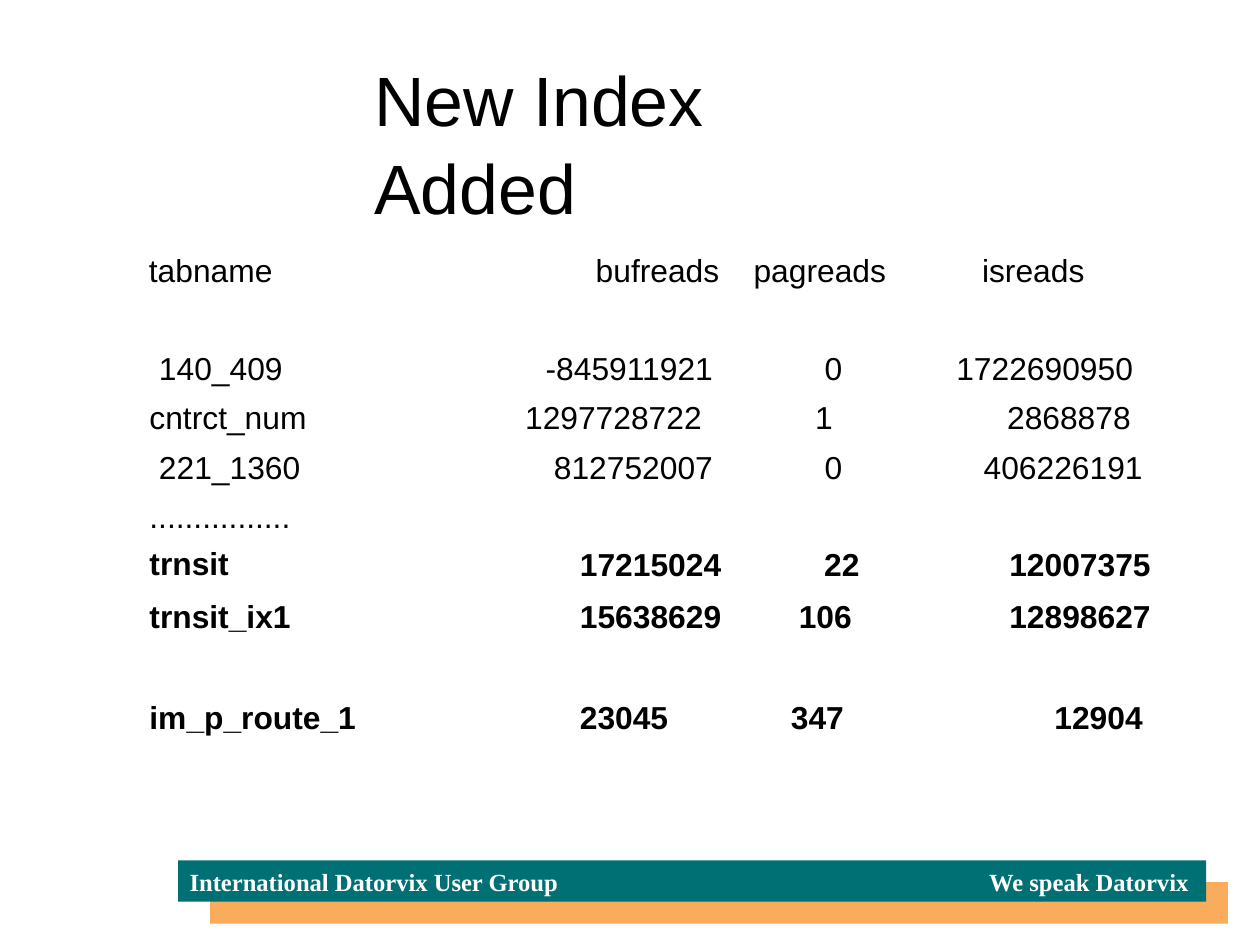
"""Build the slide that lists index read counts after a new index was added."""
from dataclasses import dataclass

from pptx import Presentation
from pptx.dml.color import RGBColor
from pptx.enum.shapes import MSO_SHAPE
from pptx.enum.text import PP_ALIGN
from pptx.slide import Slide
from pptx.table import Table
from pptx.util import Pt


@dataclass(frozen=True)
class Theme:
    body_font: str = "Arial"
    footer_font: str = "Times New Roman"
    ink: RGBColor = RGBColor(0x00, 0x00, 0x00)
    white: RGBColor = RGBColor(0xFF, 0xFF, 0xFF)
    teal: RGBColor = RGBColor(0x00, 0x70, 0x75)
    orange: RGBColor = RGBColor(0xF9, 0xAC, 0x5B)
    title_size: float = 44
    body_size: float = 20
    footer_size: float = 15.5


THEME = Theme()


@dataclass(frozen=True)
class Style:
    font: str = THEME.body_font
    size: float = THEME.body_size
    color: RGBColor = THEME.ink
    bold: bool = False


@dataclass(frozen=True)
class Bar:
    left: float
    top: float
    width: float
    height: float
    color: RGBColor


@dataclass(frozen=True)
class Label:
    text: str
    left: float
    top: float
    width: float
    height: float
    style: Style = Style()
    align: PP_ALIGN = PP_ALIGN.LEFT
    line_spacing: float = 1.0


@dataclass(frozen=True)
class Entry:
    text: str
    left: float = 0
    right: float = 0
    align: PP_ALIGN = PP_ALIGN.LEFT


@dataclass(frozen=True)
class Row:
    height: float
    top: float
    entries: tuple[Entry, ...]
    bold: bool = True
    lead: str = ""


TITLE = Style(size=THEME.title_size)
FOOTER = Style(THEME.footer_font, THEME.footer_size, THEME.white, True)
LEFT, CENTER, RIGHT = PP_ALIGN.LEFT, PP_ALIGN.CENTER, PP_ALIGN.RIGHT
HEADER_TOP, HEADER_HEIGHT = 158, 24
FOOTER_TOP, FOOTER_HEIGHT = 546.5, 19
LEAD_GAP = 7.6

BARS = (
    Bar(132.5, 555.8, 641.5, 26.2, THEME.orange),
    Bar(112.3, 542.2, 648, 25.9, THEME.teal),
)
HEADERS = (("tabname", 93.9, 80), ("bufreads", 375.5, 80), ("pagreads", 475, 86), ("isreads", 619, 67))
LABELS = (
    Label("New Index Added", 235.8, 33, 340, 108, TITLE, line_spacing=1.05),
    Label("International Datorvix User Group", 119.5, FOOTER_TOP, 260, FOOTER_HEIGHT, FOOTER),
    Label("We speak Datorvix", 589, FOOTER_TOP, 160, FOOTER_HEIGHT, FOOTER, RIGHT),
    *(Label(text, left, HEADER_TOP, width, HEADER_HEIGHT) for text, left, width in HEADERS),
)
COLUMN_WIDTHS = (185.8, 198, 95.8, 155.5)
ROWS = (
    Row(26.6, 0, (Entry("140_409", 8), Entry("-845911921", right=26.6, align=RIGHT),
                  Entry("0", left=3, align=CENTER), Entry("1722690950", 31)), False),
    Row(31.7, 4, (Entry("cntrct_num", 2), Entry("1297728722", 53),
                  Entry("1", right=9, align=CENTER), Entry("2868878", 63)), False),
    Row(31.7, 4, (Entry("221_1360", 8), Entry("812752007", right=26.6, align=RIGHT),
                  Entry("0", left=3, align=CENTER), Entry("406226191", right=7, align=RIGHT)), False),
    Row(63.4, 3, (Entry("trnsit", 2), Entry("17215024", right=21.4, align=RIGHT),
                  Entry("22", 43.5), Entry("12007375", right=2, align=RIGHT)), lead="................"),
    Row(47.5, 3, (Entry("trnsit_ix1", 2), Entry("15638629", right=21.4, align=RIGHT),
                  Entry("106", 27.5), Entry("12898627", right=2, align=RIGHT))),
    Row(42.5, 19, (Entry("im_p_route_1", 2), Entry("23045", 87.5),
                   Entry("347", 22.5), Entry("12904", right=7, align=RIGHT))),
)


def write(para, text: str, style: Style, align: PP_ALIGN = LEFT) -> None:
    """Put styled text into a paragraph."""
    para.text = text
    para.alignment = align
    para.font.name = style.font
    para.font.size = Pt(style.size)
    para.font.bold = style.bold
    para.font.color.rgb = style.color


def clear_margins(target) -> None:
    """Remove the inner margins of a text frame or a cell."""
    target.margin_left = target.margin_right = 0
    target.margin_top = target.margin_bottom = 0


def draw_bar(page: Slide, bar: Bar) -> None:
    """Draw one footer bar."""
    shape = page.shapes.add_shape(MSO_SHAPE.RECTANGLE, Pt(bar.left), Pt(bar.top), Pt(bar.width), Pt(bar.height))
    shape.shadow.inherit = False
    shape.fill.solid()
    shape.fill.fore_color.rgb = bar.color
    shape.line.fill.background()


def draw_label(page: Slide, label: Label) -> None:
    """Draw one text box."""
    box = page.shapes.add_textbox(Pt(label.left), Pt(label.top), Pt(label.width), Pt(label.height))
    frame = box.text_frame
    frame.word_wrap = True
    clear_margins(frame)
    para = frame.paragraphs[0]
    write(para, label.text, label.style, label.align)
    para.line_spacing = label.line_spacing


def fill_row(table: Table, index: int, row: Row) -> None:
    """Fill one table row, with its lead line above the first name."""
    table.rows[index].height = Pt(row.height)
    lead_height = THEME.body_size * 1.15 + LEAD_GAP
    for column, entry in enumerate(row.entries):
        cell = table.cell(index, column)
        cell.fill.background()
        clear_margins(cell)
        cell.margin_left, cell.margin_right = Pt(entry.left), Pt(entry.right)
        cell.margin_top = Pt(row.top)
        para = cell.text_frame.paragraphs[0]
        if row.lead and column == 0:
            write(para, row.lead, Style())
            para = cell.text_frame.add_paragraph()
            para.space_before = Pt(LEAD_GAP)
        elif row.lead:
            cell.margin_top = Pt(row.top + lead_height)
        write(para, entry.text, Style(bold=row.bold), entry.align)


def draw_table(page: Slide) -> None:
    """Draw the table of read counts."""
    frame = page.shapes.add_table(len(ROWS), len(COLUMN_WIDTHS), Pt(92.2), Pt(221.8),
                                  Pt(sum(COLUMN_WIDTHS)), Pt(sum(row.height for row in ROWS)))
    table = frame.table
    table.first_row = table.horz_banding = False
    for column, width in zip(table.columns, COLUMN_WIDTHS):
        column.width = Pt(width)
    for index, row in enumerate(ROWS):
        fill_row(table, index, row)


def main() -> None:
    """Build and save the deck."""
    deck = Presentation()
    deck.slide_width, deck.slide_height = Pt(794.16), Pt(595.44)
    page = deck.slides.add_slide(deck.slide_layouts[6])
    for bar in BARS:
        draw_bar(page, bar)
    for label in LABELS:
        draw_label(page, label)
    draw_table(page)
    deck.save("out.pptx")


if __name__ == "__main__":
    main()
